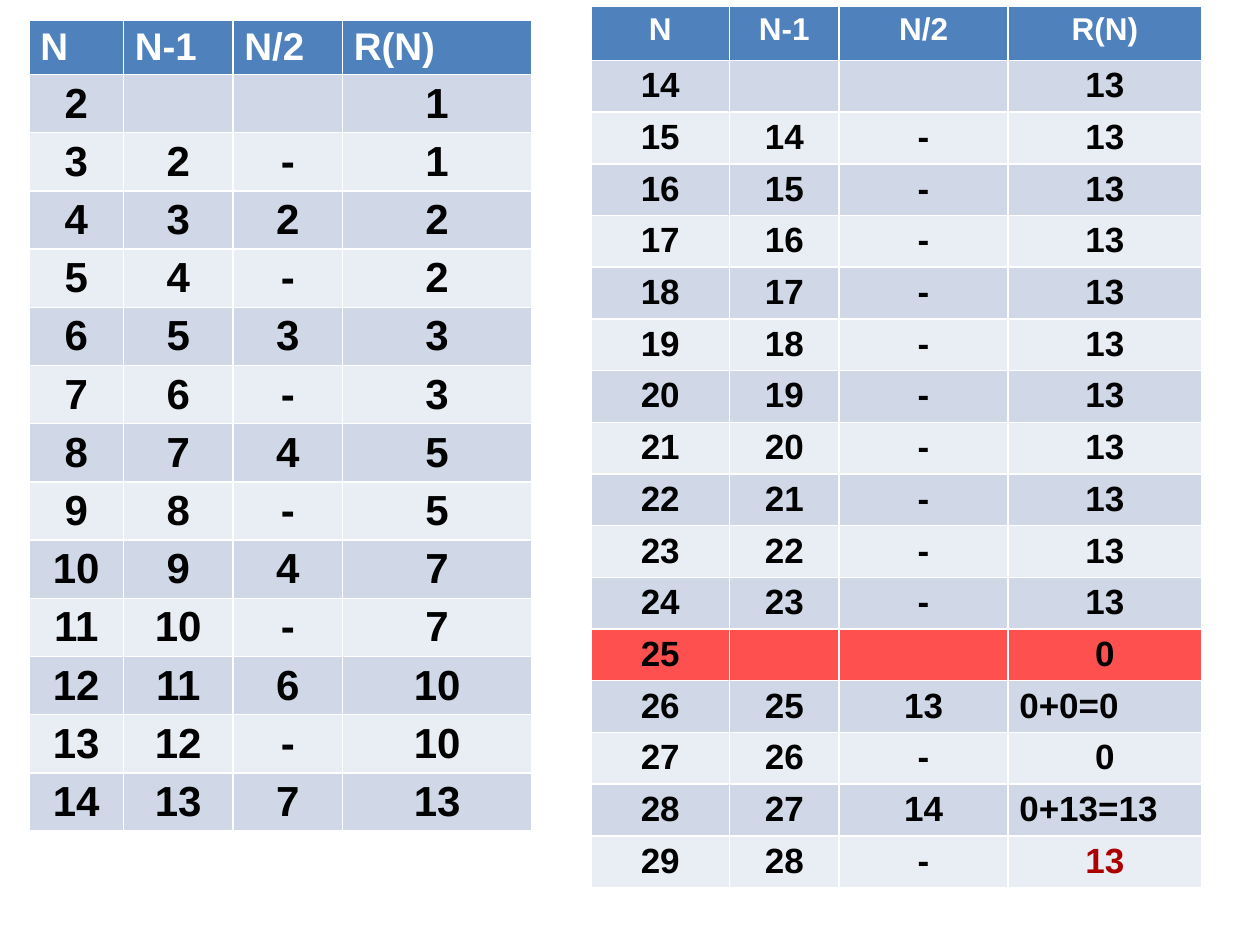
from pptx import Presentation
from pptx.dml.color import RGBColor
from pptx.enum.text import PP_ALIGN
from pptx.util import Inches, Pt

HEADERS = ("N", "N-1", "N/2", "R(N)")
TABLES = (
    {
        "left": 2.3, "top": 2.13, "height": 92.93,
        "columns": (7.5, 8.7, 8.7, 15),
        "header_size": 22, "body_size": 24, "header_align": PP_ALIGN.LEFT,
        "rows": (
            ("2", "", "", "1"),
            ("3", "2", "-", "1"),
            ("4", "3", "2", "2"),
            ("5", "4", "-", "2"),
            ("6", "5", "3", "3"),
            ("7", "6", "-", "3"),
            ("8", "7", "4", "5"),
            ("9", "8", "-", "5"),
            ("10", "9", "4", "7"),
            ("11", "10", "-", "7"),
            ("12", "11", "6", "10"),
            ("13", "12", "-", "10"),
            ("14", "13", "7", "13"),
        ),
        "blocked": None, "answer": None,
    },
    {
        "left": 46.9, "top": 0.67, "height": 98.13,
        "columns": (11, 8.7, 13.4, 15.4),
        "header_size": 18, "body_size": 20, "header_align": PP_ALIGN.CENTER,
        "rows": (
            ("14", "", "", "13"),
            *((str(n), str(n - 1), "-", "13") for n in range(15, 25)),
            ("25", "", "", "0"),
            ("26", "25", "13", "0+0=0"),
            ("27", "26", "-", "0"),
            ("28", "27", "14", "0+13=13"),
            ("29", "28", "-", "13"),
        ),
        "blocked": "25", "answer": "29",
    },
)
THEME = {
    "font": "Arial",
    "header": "4F81BD", "header_text": "FFFFFF",
    "bands": ("D0D8E8", "E9EDF4"), "text": "000000",
    "blocked": "FF5050", "answer": "AC0000",
}
HEADER_ROW, BODY_ROW = 5.73, 5.47
MARGIN_X, MARGIN_Y = Pt(6.5), Pt(3.25)

prs = Presentation()
prs.slide_width, prs.slide_height = Inches(10), Inches(7.5)
s = prs.slides.add_slide(prs.slide_layouts[6])


def across(percent):
    return int(prs.slide_width * percent / 100)


def down(percent):
    return int(prs.slide_height * percent / 100)


def fill_cell(cell, text, size, fill, color, align):
    cell.margin_left = cell.margin_right = MARGIN_X
    cell.margin_top = cell.margin_bottom = MARGIN_Y
    cell.fill.solid()
    cell.fill.fore_color.rgb = RGBColor.from_string(fill)
    if not text:
        return
    p = cell.text_frame.paragraphs[0]
    p.alignment = align
    r = p.add_run()
    r.text = text
    r.font.name, r.font.size, r.font.bold = THEME["font"], Pt(size), True
    r.font.color.rgb = RGBColor.from_string(color)


def add_recurrence_table(data):
    rows, columns = data["rows"], data["columns"]
    sp = s.shapes.add_table(
        len(rows) + 1, len(columns), across(data["left"]), down(data["top"]),
        across(sum(columns)), down(data["height"]))
    table = sp.table
    for column, width in zip(table.columns, columns):
        column.width = across(width)
    for i, row in enumerate(table.rows):
        row.height = down(BODY_ROW if i else HEADER_ROW)
    sp.height = down(data["height"])

    for j, text in enumerate(HEADERS):
        fill_cell(table.cell(0, j), text, data["header_size"], THEME["header"],
                  THEME["header_text"], data["header_align"])
    for i, values in enumerate(rows):
        blocked = values[0] == data["blocked"]
        fill = THEME["blocked"] if blocked else THEME["bands"][i % 2]
        for j, text in enumerate(values):
            answer = values[0] == data["answer"] and HEADERS[j] == "R(N)"
            color = THEME["answer" if answer else "text"]
            align = PP_ALIGN.LEFT if "=" in text else PP_ALIGN.CENTER
            fill_cell(table.cell(i + 1, j), text, data["body_size"], fill, color, align)


for data in TABLES:
    add_recurrence_table(data)
prs.save("out.pptx")
